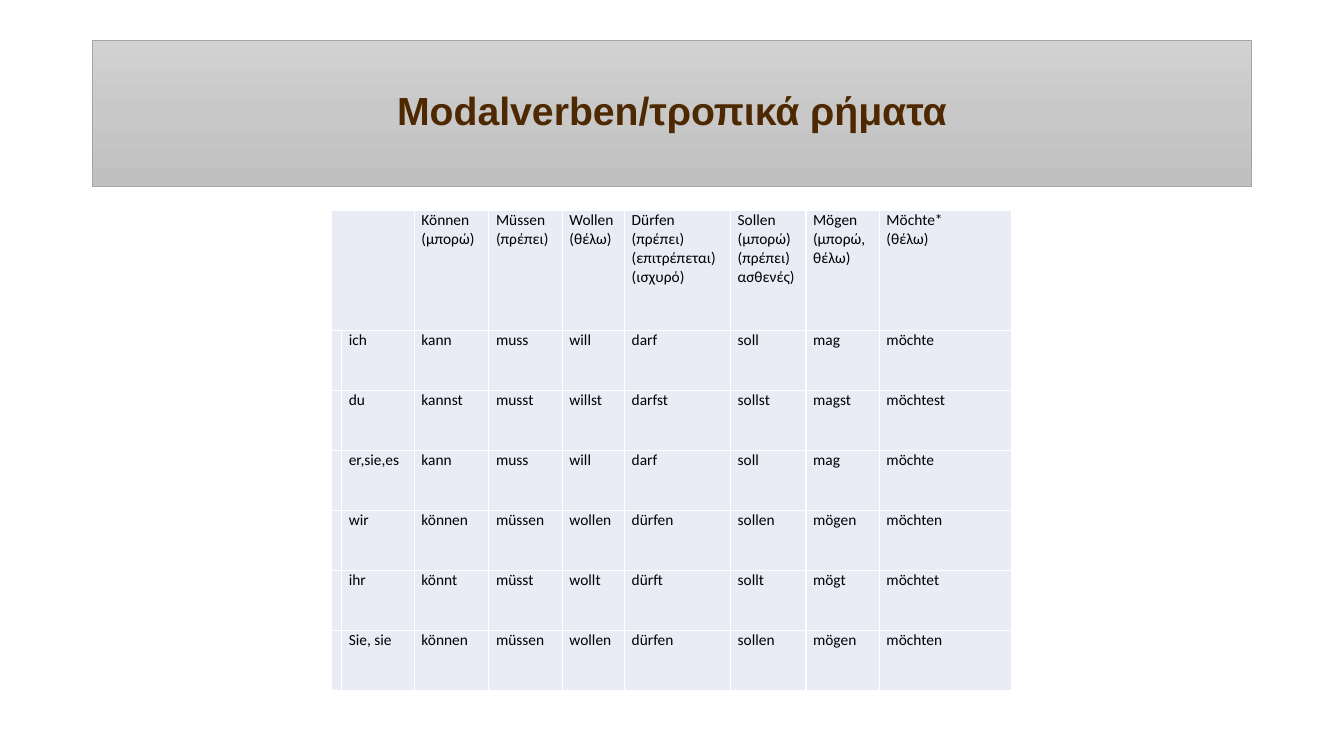
from copy import deepcopy

from lxml import etree
from pptx import Presentation
from pptx.dml.color import RGBColor
from pptx.enum.text import MSO_ANCHOR, PP_ALIGN
from pptx.oxml.ns import qn
from pptx.util import Cm, Pt

CENTER, JUSTIFY = PP_ALIGN.CENTER, PP_ALIGN.JUSTIFY
MIDDLE = MSO_ANCHOR.MIDDLE
TITLE_ONLY = 5

COLUMN_WIDTHS = [0.25, 1.83, 1.88, 1.85, 1.57, 2.67, 1.9, 1.85, 3.33]
HEADER_HEIGHT, ROW_HEIGHT = 3.02, 1.51
TABLE_ROWS = [
    ["", "", "Können\n(μπορώ)", "Müssen\n(πρέπει)", "Wollen\n(θέλω)",
     "Dürfen\n(πρέπει)\n(επιτρέπεται)\n(ισχυρό)",
     "Sollen\n(μπορώ)\n(πρέπει)\nασθενές)",
     "Mögen\n(μπορώ, θέλω)", "Möchte*\n(θέλω)"],
    ["", "ich", "kann", "muss", "will", "darf", "soll", "mag", "möchte"],
    ["", "du", "kannst", "musst", "willst", "darfst", "sollst", "magst", "möchtest"],
    ["", "er,sie,es", "kann", "muss", "will", "darf", "soll", "mag", "möchte"],
    ["", "wir", "können", "müssen", "wollen", "dürfen", "sollen", "mögen", "möchten"],
    ["", "ihr", "könnt", "müsst", "wollt", "dürft", "sollt", "mögt", "möchtet"],
    ["", "Sie, sie", "können", "müssen", "wollen", "dürfen", "sollen", "mögen", "möchten"],
]


def color(hex_string):
    return RGBColor.from_string(hex_string)


def add_borders(cell, hex_string, width):
    properties = cell._tc.get_or_add_tcPr()
    for side in ("a:lnL", "a:lnR", "a:lnT", "a:lnB"):
        line = etree.SubElement(properties, qn(side), w=str(width))
        solid = etree.SubElement(line, qn("a:solidFill"))
        etree.SubElement(solid, qn("a:srgbClr"), val=hex_string)


deck = Presentation()
deck.slide_width, deck.slide_height = Cm(33.87), Cm(19.05)
page = deck.slides.add_slide(deck.slide_layouts[TITLE_ONLY])

# Title band with a grey vertical gradient
title = page.shapes.title
title.left, title.top, title.width, title.height = Cm(2.33), Cm(1.01), Cm(29.21), Cm(3.68)
title.fill.gradient()
title.fill.gradient_angle = 270
stop_list = title._element.xpath(".//a:gsLst")[0]
stop_list.insert(1, deepcopy(stop_list[0]))
for stop, position, shade in zip(title.fill.gradient_stops, (0, 0.5, 1),
                                 ("D2D2D2", "C8C8C8", "C0C0C0")):
    stop.position = position
    stop.color.rgb = color(shade)
title.line.color.rgb = color("A5A5A5")
title.line.width = Pt(0.5)

title.text_frame.text = "Modalverben/τροπικά ρήματα"
title.text_frame.vertical_anchor = MIDDLE
para = title.text_frame.paragraphs[0]
para.alignment = CENTER
para.line_spacing = 0.9
para.font.name, para.font.size, para.font.bold = "Arial", Pt(28), True
para.font.color.rgb = color("4E2800")

# Conjugation table
table = page.shapes.add_table(
    len(TABLE_ROWS), len(COLUMN_WIDTHS), Cm(8.36), Cm(5.31), Cm(sum(COLUMN_WIDTHS)),
    Cm(HEADER_HEIGHT + ROW_HEIGHT * (len(TABLE_ROWS) - 1))).table
table.first_row = table.horz_banding = False
for column, width in zip(table.columns, COLUMN_WIDTHS):
    column.width = Cm(width)
for index, row in enumerate(table.rows):
    row.height = Cm(ROW_HEIGHT if index else HEADER_HEIGHT)

# Cell text, borders and fill
for row, texts in zip(table.rows, TABLE_ROWS):
    for cell, text in zip(row.cells, texts):
        cell.margin_left = cell.margin_right = Cm(0.18) if text else 0
        cell.margin_top = cell.margin_bottom = 0
        add_borders(cell, "FFFFFF", Pt(1))
        cell.fill.solid()
        cell.fill.fore_color.rgb = color("E9EBF5")
        cell.text = text
        for para in cell.text_frame.paragraphs:
            para.alignment = JUSTIFY
            para.font.name, para.font.size = "Calibri", Pt(11)
            para.font.color.rgb = color("000000")
table.cell(0, 0).merge(table.cell(0, 1))

deck.save("out.pptx")
